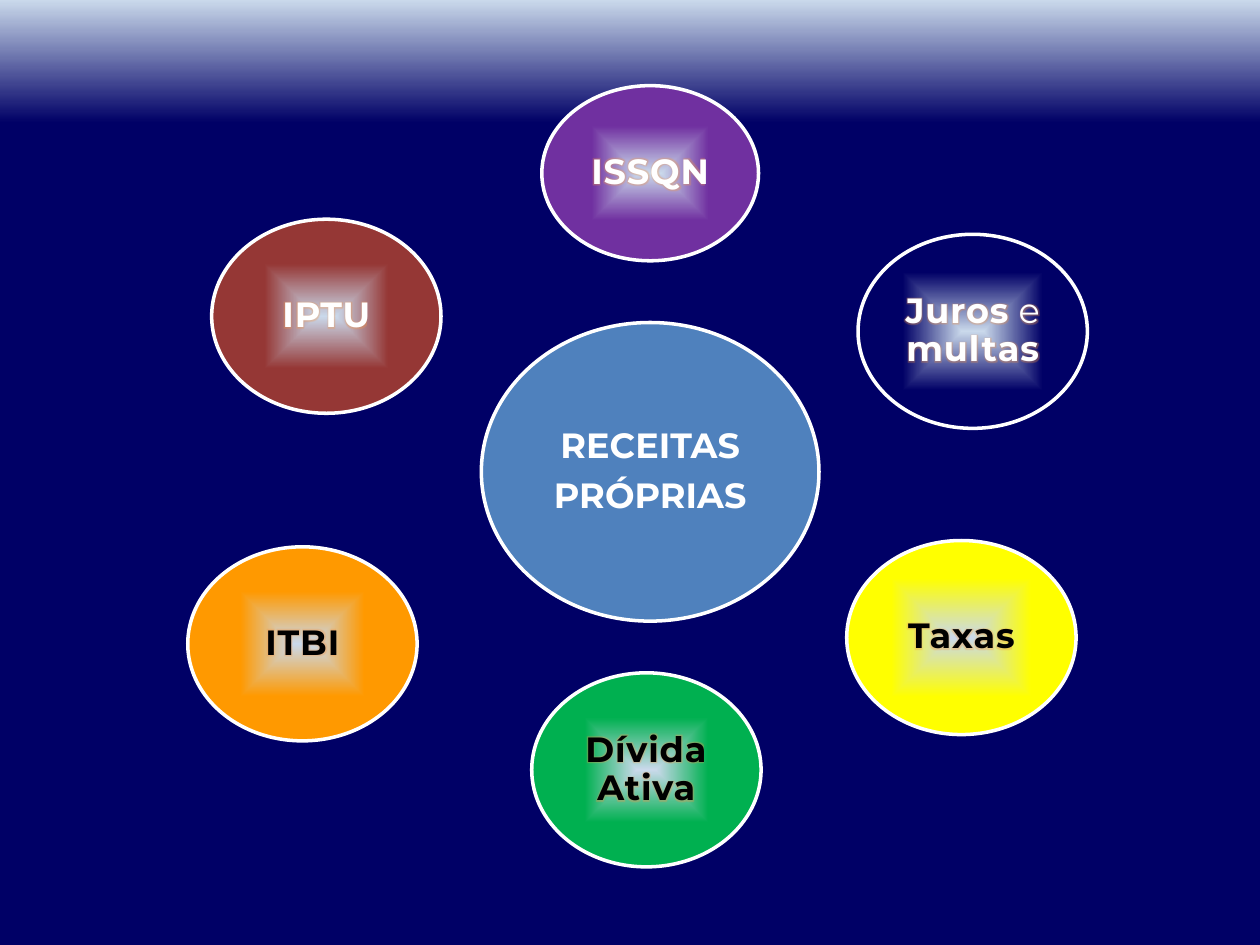
from lxml import etree
from pptx import Presentation
from pptx.dml.color import RGBColor
from pptx.enum.shapes import MSO_SHAPE
from pptx.enum.text import MSO_ANCHOR, PP_ALIGN
from pptx.oxml import parse_xml
from pptx.oxml.ns import nsdecls, qn
from pptx.util import Inches, Pt

ELLIPSE = MSO_SHAPE.OVAL
MIDDLE, CENTER = MSO_ANCHOR.MIDDLE, PP_ALIGN.CENTER

FONT = "Montserrat"
WHITE, BLACK, PALE, NAVY = "FFFFFF", "000000", "CAD9EB", "000066"
WIDTH, HEIGHT = 10, 7.5
LARGE, MEDIUM, SMALL = (2.68, 2.37), (1.82, 1.54), (1.72, 1.39)

# Content: the hub, then its revenue sources clockwise from the top
HUB = {"center": (5.16, 3.745), "fill": "4F81BD", "lines": ["RECEITAS", "PRÓPRIAS"]}
# center, size, fill, share of the gradient, text colour, (text, emphasised) spans
SOURCES = [
    ((5.16, 1.375), SMALL, "7030A0", 0.54, WHITE, [("ISSQN", True)]),
    ((7.72, 2.63), MEDIUM, NAVY, 0.61, WHITE,
     [("Juros", True), (" e ", False), ("multas", True)]),
    ((7.63, 5.06), MEDIUM, "FFFF00", 0.61, BLACK, [("Taxas", True)]),
    ((5.13, 6.11), MEDIUM, "00B050", 0.54, BLACK, [("Dívida Ativa", True)]),
    ((2.4, 5.11), MEDIUM, "FF9900", 0.54, BLACK, [("ITBI", True)]),
    ((2.59, 2.51), MEDIUM, "953735", 0.54, WHITE, [("IPTU", True)]),
]


def rgb(value):
    return RGBColor.from_string(value)


def set_gradient(fill, end, share):
    """Blend from the pale colour to the end colour, reached at the given share."""
    fill.gradient()
    for stop, color, position in zip(fill.gradient_stops, (PALE, end), (0, share)):
        stop.color.rgb = rgb(color)
        stop.position = position


def spread_from_center(shape):
    gradient = shape._element.spPr.find(qn("a:gradFill"))
    linear = gradient.find(qn("a:lin"))
    gradient.replace(linear, parse_xml(
        f'<a:path {nsdecls("a")} path="shape">'
        '<a:fillToRect l="50000" t="50000" r="50000" b="50000"/></a:path>'))


def add_circle(page, center, size):
    left, top = (middle - side / 2 for middle, side in zip(center, size))
    circle = page.shapes.add_shape(
        ELLIPSE, Inches(left), Inches(top), *map(Inches, size))
    circle.shadow.inherit = False
    circle.line.color.rgb = rgb(WHITE)
    circle.line.width = Pt(2)
    frame = circle.text_frame
    frame.word_wrap = True
    frame.vertical_anchor = MIDDLE
    frame.margin_left = frame.margin_right = Inches(0.03)
    frame.margin_top = frame.margin_bottom = Inches(0.03)
    return circle


def format_paragraph(para):
    para.alignment = CENTER
    para.line_spacing = 0.9
    para.space_after = Pt(0)
    after = para._p.pPr.find(qn("a:spcAft"))
    after.remove(after[0])
    etree.SubElement(after, qn("a:spcPct"), val="35000")


def add_span(para, text, color=WHITE, bold=True, glow=False):
    span = para.add_run()
    span.text = text
    font = span.font
    font.name, font.size, font.bold = FONT, Pt(20), bold
    font.color.rgb = rgb(color)
    if glow:
        properties = span._r.get_or_add_rPr()
        properties.set("spc", "50")
        properties.find(qn("a:solidFill")).addnext(parse_xml(
            f'<a:effectLst {nsdecls("a")}><a:glow rad="45500">'
            '<a:srgbClr val="F79646"><a:alpha val="35000"/></a:srgbClr>'
            '</a:glow></a:effectLst>'))


def main():
    deck = Presentation()
    deck.slide_width, deck.slide_height = Inches(WIDTH), Inches(HEIGHT)
    page = deck.slides.add_slide(deck.slide_layouts[6])

    # Background fading downwards
    backdrop = page.background.fill
    set_gradient(backdrop, NAVY, 0.13)
    backdrop.gradient_angle = 270

    # Hub
    hub = add_circle(page, HUB["center"], LARGE)
    hub.fill.solid()
    hub.fill.fore_color.rgb = rgb(HUB["fill"])
    for number, line in enumerate(HUB["lines"]):
        frame = hub.text_frame
        para = frame.add_paragraph() if number else frame.paragraphs[0]
        format_paragraph(para)
        add_span(para, line)

    # Revenue sources around the hub
    for center, size, fill, share, color, spans in SOURCES:
        circle = add_circle(page, center, size)
        set_gradient(circle.fill, fill, share)
        spread_from_center(circle)
        para = circle.text_frame.paragraphs[0]
        format_paragraph(para)
        for text, strong in spans:
            add_span(para, text, color=color, bold=strong, glow=strong)

    deck.save("out.pptx")


if __name__ == "__main__":
    main()
